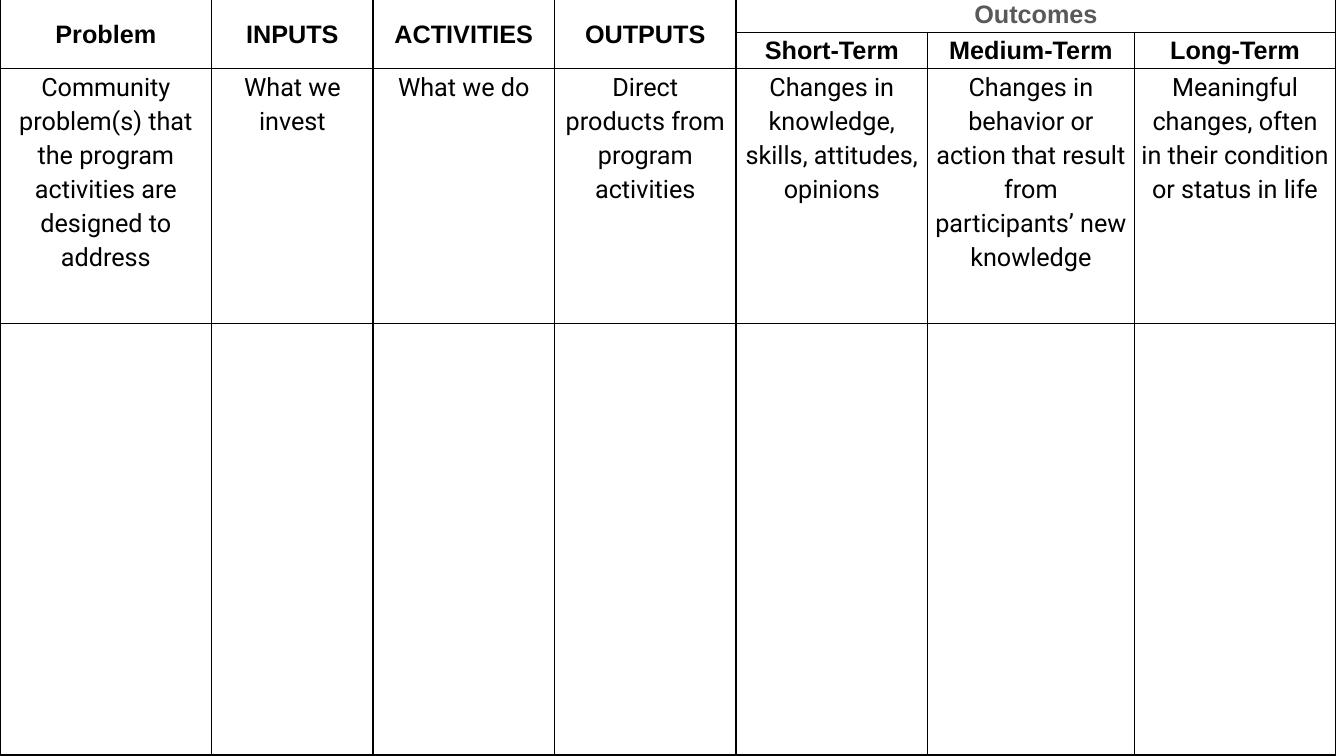
import pptx
import pptx.util
import pptx.dml.color
import pptx.enum.text
from lxml import etree

Inches = pptx.util.Inches
Pt = pptx.util.Pt
RGB = pptx.dml.color.RGBColor
ANCHOR = pptx.enum.text.MSO_ANCHOR
ALIGN = pptx.enum.text.PP_ALIGN

BLACK = RGB(0x00, 0x00, 0x00)
GREY = RGB(0x59, 0x59, 0x59)

# heading, width in inches, description
STEPS = [
    ("Problem", 2.1, "Community problem(s) that the program activities are designed to address"),
    ("INPUTS", 1.6, "What we invest"),
    ("ACTIVITIES", 1.8, "What we do"),
    ("OUTPUTS", 1.8, "Direct products from program activities"),
]
GROUP = "Outcomes"
TERMS = [
    ("Short-Term", 1.9, "Changes in knowledge, skills, attitudes, opinions"),
    ("Medium-Term", 2.05,
     "Changes in behavior or action that result from participants’ new knowledge"),
    ("Long-Term", 2.0, "Meaningful changes, often in their condition or status in life"),
]
ROWS = [0.36, 0.36, 2.53, 4.28]
TOP = -0.04
NS = "http://schemas.openxmlformats.org/drawingml/2006/main"


def frame(cell):
    """Clear the cell's fill and draw a thin black border on all four sides."""
    cell.fill.background()
    props = cell._tc.get_or_add_tcPr()
    for spot, side in enumerate(("lnL", "lnR", "lnT", "lnB")):
        line = etree.Element(f"{{{NS}}}{side}", w=str(Pt(1)))
        fill = etree.SubElement(line, f"{{{NS}}}solidFill")
        etree.SubElement(fill, f"{{{NS}}}srgbClr", val=str(BLACK))
        props.insert(spot, line)


def write(cell, text, font="Arial", bold=True, color=BLACK):
    cell.text_frame.text = text
    para = cell.text_frame.paragraphs[0]
    para.alignment = ALIGN.CENTER
    para.line_spacing = 1.15
    style = para.runs[0].font
    style.name, style.size, style.bold = font, Pt(18), bold
    style.color.rgb = color


def main():
    deck = pptx.Presentation()
    deck.slide_width, deck.slide_height = Inches(13.33), Inches(7.5)
    slide = deck.slides.add_slide(deck.slide_layouts[6])

    cols = STEPS + TERMS
    width = sum(col[1] for col in cols)
    grid = slide.shapes.add_table(len(ROWS), len(cols), 0, Inches(TOP),
                                  Inches(width), Inches(sum(ROWS))).table
    grid.first_row = grid.horz_banding = False
    for row, high in zip(grid.rows, ROWS):
        row.height = Inches(high)
    for cell in grid.iter_cells():
        cell.margin_left = cell.margin_right = Inches(0.06)
        cell.margin_top = cell.margin_bottom = 0
        frame(cell)

    first = len(STEPS)
    for num, (head, wide, note) in enumerate(cols):
        grid.columns[num].width = Inches(wide)
        title = grid.cell(0 if num < first else 1, num)
        if num < first:
            title.merge(grid.cell(1, num))
            title.vertical_anchor = ANCHOR.MIDDLE
        write(title, head)
        write(grid.cell(2, num), note, "Roboto", False)
    group = grid.cell(0, first)
    group.merge(grid.cell(0, len(cols) - 1))
    write(group, GROUP, color=GREY)

    deck.save("out.pptx")


if __name__ == "__main__":
    main()
